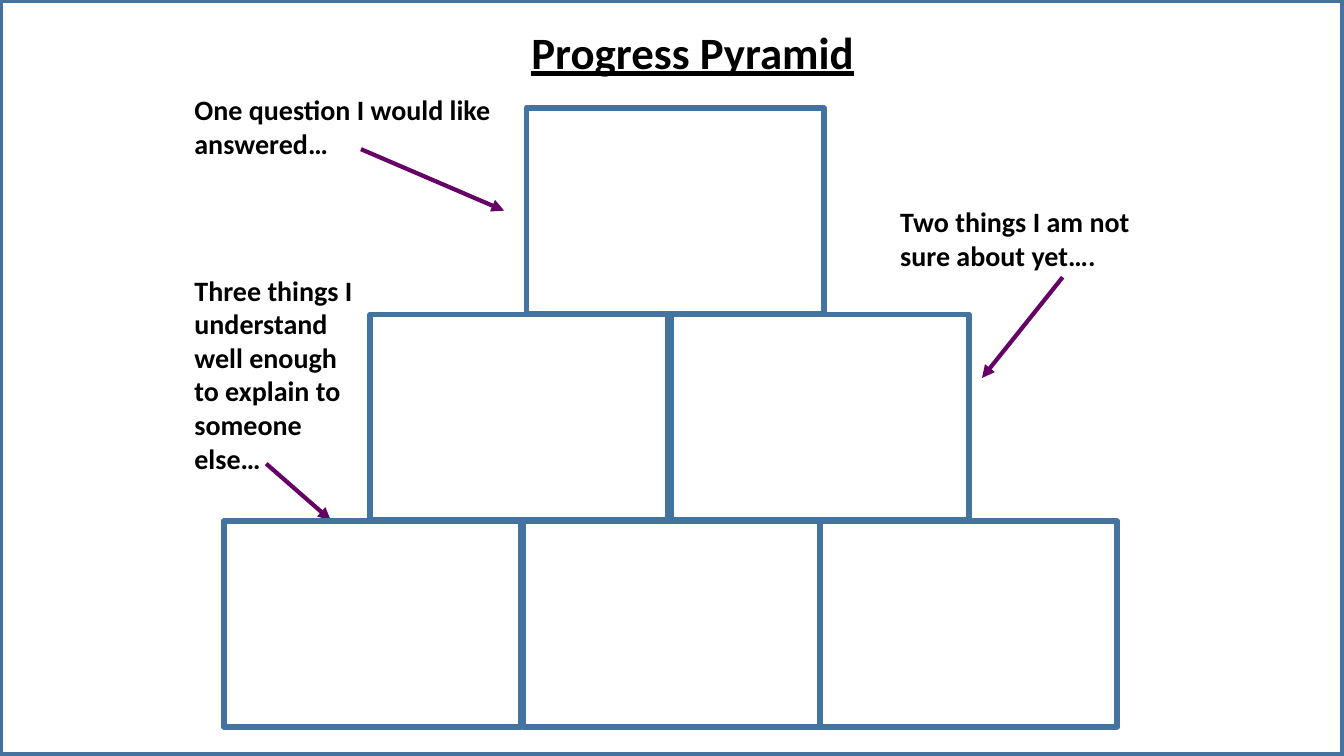
"""Build the Progress Pyramid slide, measured at 100 px to the inch."""
from lxml import etree
from pptx import Presentation
from pptx.dml.color import RGBColor as Rgb
from pptx.enum.shapes import MSO_CONNECTOR as Link, MSO_SHAPE as Shape
from pptx.enum.text import MSO_ANCHOR as Anchor, MSO_AUTO_SIZE as Fit, PP_ALIGN as Align
from pptx.oxml.ns import qn
from pptx.util import Pt

PX = 9144
WIDE, HIGH = 1333, 750
HUES = {"text": "000000", "edge": "43739E", "arrow": "660066"}
BRICK = (295, 204)
TOP, STEP = 107, 205
ROWS = [[522], [367, 666], [222, 519, 813]]
NOTES = [
    ("One question I would like answered…", (183, 87, 321, 77)),
    ("Two things I am not sure about yet….", (883, 198, 264, 77)),
    ("Three things I understand well enough to explain to someone else…",
     (183, 266, 186, 212)),
]
ARROWS = [(358, 148, 500, 209), (1054, 275, 974, 375), (264, 460, 328, 516)]


def emu(box):
    return [n * PX for n in box]


def hue(name):
    return Rgb.from_string(HUES[name])


def write(shape, text, size):
    frame = shape.text_frame
    frame.word_wrap = True
    frame.auto_size = Fit.NONE
    frame.vertical_anchor = Anchor.TOP
    frame.text = text
    para = frame.paragraphs[0]
    font = para.font
    font.name, font.size, font.bold = "Calibri", Pt(size), True
    font.color.rgb = hue("text")
    return para


def add_title(slide, text, box):
    title = slide.shapes.title
    title.left, title.top, title.width, title.height = emu(box)
    para = write(title, text, 32)
    para.alignment = Align.CENTER
    para.font.underline = True


def add_note(slide, text, box):
    write(slide.shapes.add_textbox(*emu(box)), text, 20)


def add_box(slide, box, width):
    rect = slide.shapes.add_shape(Shape.RECTANGLE, *emu(box))
    rect.shadow.inherit = False
    rect.fill.background()
    rect.line.color.rgb = hue("edge")
    rect.line.width = Pt(width)


def add_arrow(slide, ends):
    arrow = slide.shapes.add_connector(Link.STRAIGHT, *emu(ends))
    arrow.line.color.rgb = hue("arrow")
    arrow.line.width = Pt(3)
    etree.SubElement(arrow.line._get_or_add_ln(), qn("a:tailEnd"), type="triangle")
    etree.SubElement(arrow._element.spPr, qn("a:effectLst"))


def main():
    deck = Presentation()
    deck.slide_width, deck.slide_height = emu((WIDE, HIGH))
    slide = deck.slides.add_slide(deck.slide_layouts[5])
    add_title(slide, "Progress Pyramid", (454, 19, 466, 64))
    for ends in ARROWS:
        add_arrow(slide, ends)
    for text, box in NOTES:
        add_note(slide, text, box)
    for row, lefts in enumerate(ROWS):
        for left in lefts:
            add_box(slide, (left, TOP + row * STEP, *BRICK), 4)
    add_box(slide, (0, 0, WIDE, HIGH), 5)
    deck.save("out.pptx")


if __name__ == "__main__":
    main()
